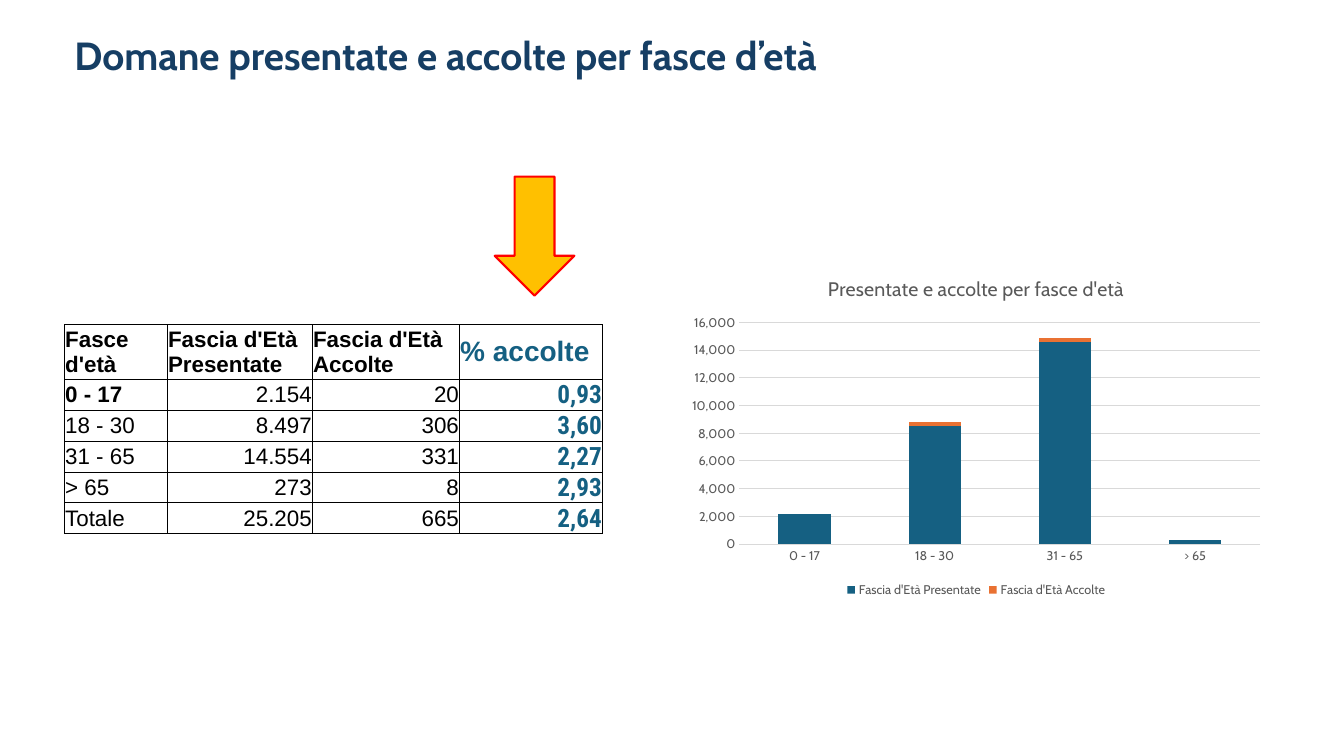
import dataclasses
import typing

import lxml.etree
import pptx
import pptx.chart.data
import pptx.dml.color
import pptx.enum.chart
import pptx.enum.dml
import pptx.enum.shapes
import pptx.enum.text
import pptx.oxml
import pptx.oxml.ns
import pptx.util

Pt = pptx.util.Pt
ALIGN = pptx.enum.text.PP_ALIGN
ANCHOR = pptx.enum.text.MSO_ANCHOR


@dataclasses.dataclass(frozen=True)
class Theme:
    navy: str = "163E64"
    teal: str = "156082"
    orange: str = "E97132"
    amber: str = "FFC000"
    red: str = "FF0000"
    black: str = "000000"
    grey: str = "595959"
    grid: str = "D9D9D9"
    heading_font: str = "Cabin"
    table_font: str = "Arial"
    rate_font: str = "Roboto Condensed"
    heading_size: float = 28
    rate_header_size: float = 20
    rate_size: float = 18
    cell_size: float = 16
    chart_title_size: float = 14
    chart_size: float = 10
    axis_size: float = 9


@dataclasses.dataclass(frozen=True)
class AgeBand:
    label: str
    submitted: int
    accepted: int
    rate: str
    bold_label: bool = False


@dataclasses.dataclass(frozen=True)
class Box:
    left: float
    top: float
    width: float
    height: float

    def lengths(self) -> list[pptx.util.Length]:
        return [Pt(value) for value in dataclasses.astuple(self)]


THEME = Theme()
BANDS = [
    AgeBand("0 - 17", 2154, 20, "0,93", bold_label=True),
    AgeBand("18 - 30", 8497, 306, "3,60"),
    AgeBand("31 - 65", 14554, 331, "2,27"),
    AgeBand("> 65", 273, 8, "2,93"),
]
TOTAL = AgeBand("Totale", 25205, 665, "2,64")
SUBMITTED = "Fascia d'Età Presentate"
ACCEPTED = "Fascia d'Età Accolte"
HEADERS = ["Fasce d'età", SUBMITTED, ACCEPTED, "% accolte"]
COLUMN_WIDTHS = [73.5, 103.6, 105.1, 102.2]
ROW_HEIGHT = 15.8


def rgb(color: str) -> pptx.dml.color.RGBColor:
    return pptx.dml.color.RGBColor.from_string(color)


def style_font(font: typing.Any, size: float, color: str, name: str, bold: bool = False) -> None:
    font.size, font.name, font.bold = Pt(size), name, bold
    font.color.rgb = rgb(color)


def write_text(frame: typing.Any, text: str, *, size: float, color: str, font: str,
               bold: bool = False, align: typing.Any = ALIGN.LEFT,
               spacing: float | None = None) -> None:
    paragraph = frame.paragraphs[0]
    paragraph.alignment = align
    paragraph.line_spacing = spacing
    run = paragraph.add_run()
    run.text = text
    style_font(run.font, size, color, font, bold)


def add_heading(slide: typing.Any, box: Box, text: str) -> None:
    frame = slide.shapes.add_textbox(*box.lengths()).text_frame
    frame.word_wrap = True
    frame.vertical_anchor = ANCHOR.MIDDLE
    write_text(frame, text, size=THEME.heading_size, color=THEME.navy,
               font=THEME.heading_font, bold=True, spacing=0.9)


def outline_cell(cell: typing.Any, color: str, width: float) -> None:
    properties = cell._tc.get_or_add_tcPr()
    for side in ("lnL", "lnR", "lnT", "lnB"):
        line = lxml.etree.SubElement(properties, pptx.oxml.ns.qn(f"a:{side}"), w=str(Pt(width)))
        fill = lxml.etree.SubElement(line, pptx.oxml.ns.qn("a:solidFill"))
        lxml.etree.SubElement(fill, pptx.oxml.ns.qn("a:srgbClr"), val=color)


def fill_cell(cell: typing.Any, text: str, anchor: typing.Any = ANCHOR.MIDDLE,
              **text_format: typing.Any) -> None:
    cell.margin_left = cell.margin_top = cell.margin_right = Pt(0.5)
    cell.margin_bottom = Pt(0)
    cell.vertical_anchor = anchor
    outline_cell(cell, THEME.black, 0.5)
    cell.fill.background()
    write_text(cell.text_frame, text, **text_format)


def add_age_table(slide: typing.Any, box: Box, bands: list[AgeBand]) -> None:
    frame = slide.shapes.add_table(len(bands) + 1, len(HEADERS), *box.lengths())
    table = frame.table
    table.first_row = table.horz_banding = False
    for column, width in zip(table.columns, COLUMN_WIDTHS):
        column.width = Pt(width)
    for row in table.rows:
        row.height = Pt(ROW_HEIGHT)
    frame.height = Pt(box.height)

    plain = dict(size=THEME.cell_size, color=THEME.black, font=THEME.table_font)
    rate_header = plain | dict(size=THEME.rate_header_size, color=THEME.teal)
    rate = dict(size=THEME.rate_size, color=THEME.teal, font=THEME.rate_font, bold=True,
                align=ALIGN.RIGHT, anchor=ANCHOR.BOTTOM)
    for index, header in enumerate(HEADERS):
        style = rate_header if header == HEADERS[-1] else plain
        fill_cell(table.cell(0, index), header, bold=True, **style)
    for index, band in enumerate(bands, start=1):
        fill_cell(table.cell(index, 0), band.label, bold=band.bold_label, **plain)
        for column, count in enumerate((band.submitted, band.accepted), start=1):
            fill_cell(table.cell(index, column), f"{count:,}".replace(",", "."),
                      align=ALIGN.RIGHT, **plain)
        fill_cell(table.cell(index, 3), band.rate, **rate)


def add_age_chart(slide: typing.Any, box: Box, title: str, bands: list[AgeBand]) -> None:
    data = pptx.chart.data.CategoryChartData(number_format="#,##0")
    data.categories = [band.label for band in bands]
    data.add_series(SUBMITTED, [round(band.submitted, -2) for band in bands])
    data.add_series(ACCEPTED, [round(band.accepted, -2) for band in bands])
    chart = slide.shapes.add_chart(
        pptx.enum.chart.XL_CHART_TYPE.COLUMN_STACKED, *box.lengths(), data).chart
    style_font(chart.font, THEME.chart_size, THEME.black, THEME.heading_font)
    chart.has_title = True
    write_text(chart.chart_title.text_frame, title, size=THEME.chart_title_size,
               color=THEME.grey, font=THEME.heading_font, align=ALIGN.CENTER)
    chart.chart_title.include_in_layout = False
    chart.has_legend = True
    chart.legend.position = pptx.enum.chart.XL_LEGEND_POSITION.BOTTOM
    chart.legend.include_in_layout = False
    style_font(chart.legend.font, THEME.axis_size, THEME.grey, THEME.heading_font)

    plot = chart.plots[0]
    plot.gap_width, plot.overlap, plot.vary_by_categories = 150, 100, False
    for series, color in zip(plot.series, (THEME.teal, THEME.orange)):
        series.format.fill.solid()
        series.format.fill.fore_color.rgb = rgb(color)

    counts, ages = chart.value_axis, chart.category_axis
    for axis in (counts, ages):
        axis.major_tick_mark = axis.minor_tick_mark = pptx.enum.chart.XL_TICK_MARK.NONE
        style_font(axis.tick_labels.font, THEME.axis_size, THEME.grey, THEME.heading_font)
    counts.minimum_scale, counts.maximum_scale, counts.major_unit = 0, 16000, 2000
    counts.tick_labels.number_format = "#,##0"
    counts.tick_labels.number_format_is_linked = False
    counts.format.line.fill.background()
    for line in (counts.major_gridlines.format.line, ages.format.line):
        line.color.rgb = rgb(THEME.grid)
        line.width = Pt(0.75)


def add_rate_arrow(slide: typing.Any, box: Box) -> None:
    arrow = slide.shapes.add_shape(
        pptx.enum.shapes.MSO_SHAPE.RIGHT_ARROW, *box.lengths())
    arrow.rotation = 90
    arrow.shadow.inherit = False
    arrow.fill.solid()
    arrow.fill.fore_color.rgb = rgb(THEME.amber)
    arrow.line.color.rgb = rgb(THEME.red)
    arrow.line.width = Pt(1.5)


def main() -> None:
    """Build the slide on applications submitted and accepted by age band."""
    deck = pptx.Presentation()
    deck.slide_width, deck.slide_height = Pt(960), Pt(540)
    slide = deck.slides.add_slide(deck.slide_layouts[6])
    add_heading(slide, Box(46.1, 15.8, 879.1, 50.4), "Domane presentate e accolte per fasce d’età")
    add_age_table(slide, Box(46.1, 231.8, sum(COLUMN_WIDTHS), 149.8), BANDS + [TOTAL])
    add_age_chart(slide, Box(486, 185.4, 422.6, 244.5),
                  "Presentate e accolte per fasce d'età", BANDS)
    add_rate_arrow(slide, Box(339.3, 140.2, 85, 56.9))
    deck.save("out.pptx")


if __name__ == "__main__":
    main()
